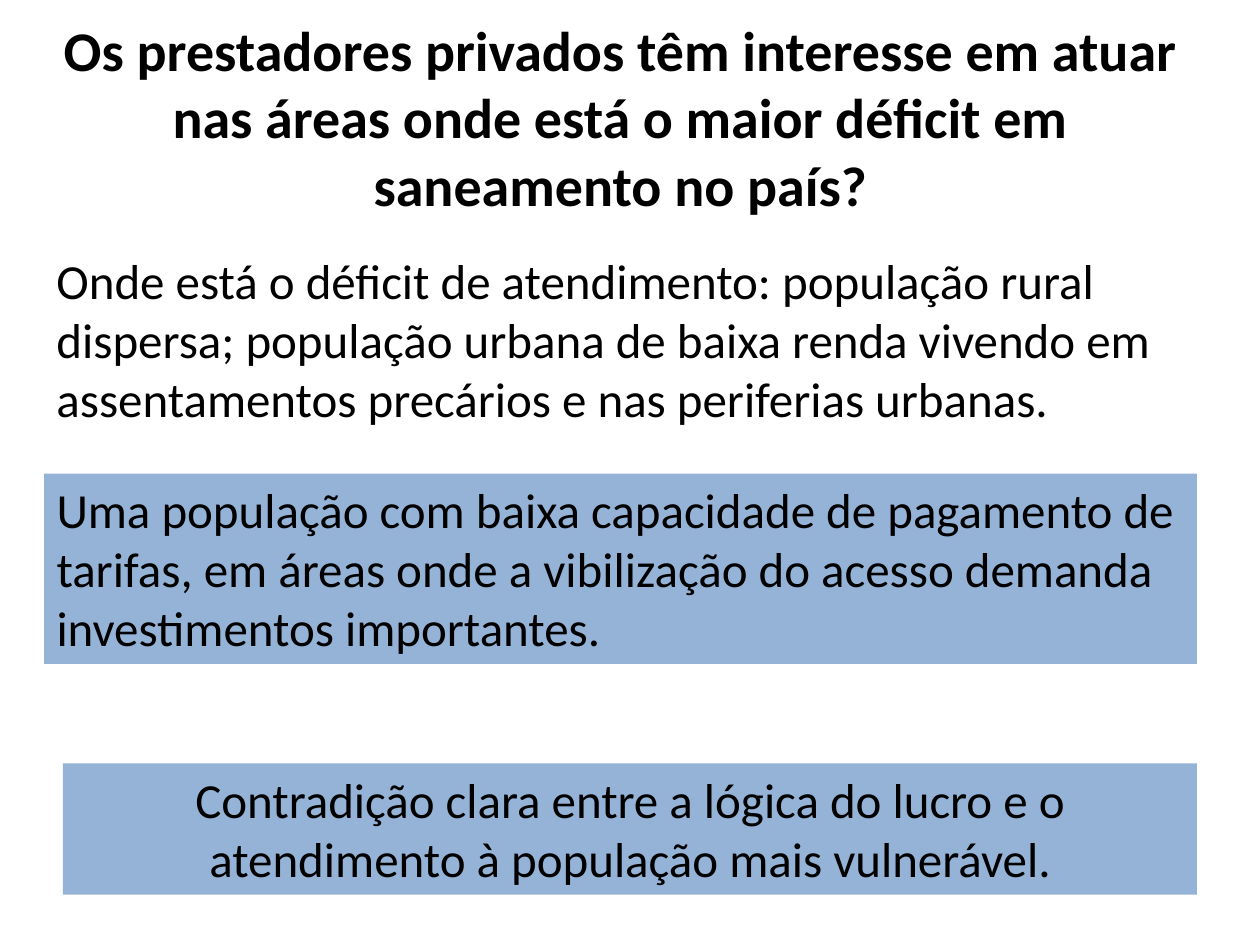
from pptx import Presentation
from pptx.dml.color import RGBColor
from pptx.enum.shapes import MSO_SHAPE
from pptx.enum.text import MSO_ANCHOR, PP_ALIGN
from pptx.util import Inches, Pt


def color(hex_value):
    return RGBColor.from_string(hex_value)


class SlideBuilder:
    ink = "000000"
    panel_fill = "95B3D7"
    body_format = {"name": "Calibri", "size": Pt(28), "bold": False}
    title_format = {**body_format, "size": Pt(32), "bold": True}

    def __init__(self, slide):
        self.slide = slide

    def set_wording(self, box, wording, font_format, align, anchor):
        frame = box.text_frame
        frame.word_wrap = True
        frame.vertical_anchor = anchor
        paragraph = frame.paragraphs[0]
        paragraph.alignment = align
        run = paragraph.add_run()
        run.text = wording
        run.font.color.rgb = color(self.ink)
        for attribute, value in font_format.items():
            setattr(run.font, attribute, value)

    def text(self, bounds, wording, font_format=body_format,
             align=PP_ALIGN.LEFT, anchor=MSO_ANCHOR.TOP):
        box = self.slide.shapes.add_textbox(*map(Inches, bounds))
        self.set_wording(box, wording, font_format, align, anchor)

    def title(self, bounds, wording):
        self.text(bounds, wording, self.title_format,
                  PP_ALIGN.CENTER, MSO_ANCHOR.MIDDLE)

    def panel(self, bounds, wording, align=PP_ALIGN.LEFT):
        box = self.slide.shapes.add_shape(
            MSO_SHAPE.RECTANGLE, *map(Inches, bounds))
        box.shadow.inherit = False
        box.fill.solid()
        box.fill.fore_color.rgb = color(self.panel_fill)
        box.line.fill.background()
        self.set_wording(box, wording, self.body_format, align, MSO_ANCHOR.TOP)


def main():
    deck = Presentation()
    deck.slide_width = Inches(10)
    deck.slide_height = Inches(7.5)
    builder = SlideBuilder(deck.slides.add_slide(deck.slide_layouts[6]))

    left, right = 0.35, 9.5
    width = right - left
    builder.title(
        (left, 0.3, width, 1.25),
        "Os prestadores privados têm interesse em atuar nas áreas onde está "
        "o maior déficit em saneamento no país?")
    builder.text(
        (left, 1.94, 9.37, 1.64),
        "Onde está o déficit de atendimento: população rural dispersa; "
        "população urbana de baixa renda vivendo em assentamentos precários "
        "e nas periferias urbanas.")
    builder.panel(
        (left, 3.76, width, 1.51),
        "Uma população com baixa capacidade de pagamento de tarifas, em áreas "
        "onde a vibilização do acesso demanda investimentos importantes.")
    builder.panel(
        (0.5, 6.06, right - 0.5, 1.04),
        "Contradição clara entre a lógica do lucro e o atendimento à "
        "população mais vulnerável.",
        PP_ALIGN.CENTER)

    deck.save("out.pptx")


if __name__ == "__main__":
    main()
